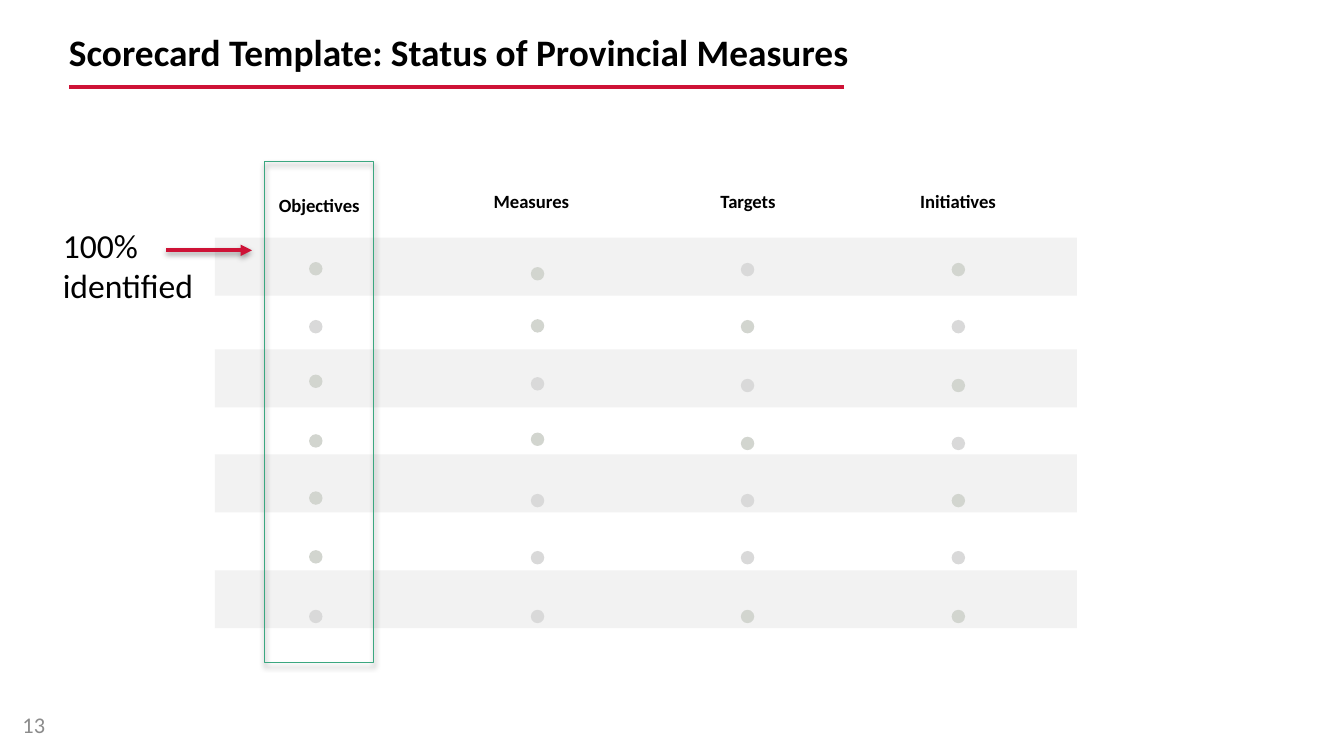
from lxml.etree import SubElement
from pptx import Presentation
from pptx.dml.color import RGBColor
from pptx.enum.shapes import MSO_CONNECTOR, MSO_SHAPE
from pptx.enum.text import MSO_ANCHOR, MSO_AUTO_SIZE, PP_ALIGN
from pptx.oxml import parse_xml
from pptx.oxml.ns import nsdecls, qn
from pptx.util import Pt

PX = 5715
HUES = {"ink": "000000", "gray": "8C8C8C", "band": "F2F2F2", "dark": "D2D5CF",
        "light": "D9D9D9", "red": "CE1236", "green": "3BA780"}
HUES = {name: RGBColor.from_string(code) for name, code in HUES.items()}


def write(frame, text, size, hue="ink", bold=False, align=PP_ALIGN.LEFT):
    frame.text = text
    para = frame.paragraphs[0]
    para.alignment = align
    font = para.runs[0].font
    font.name, font.size, font.bold = "Calibri", Pt(size), bold
    font.color.rgb = HUES[hue]


def shade(shape, alpha, dist):
    shape._element.spPr.append(parse_xml(
        f'<a:effectLst {nsdecls("a")}><a:outerShdw blurRad="{Pt(3.1)}" '
        f'dist="{Pt(dist)}" dir="5400000" rotWithShape="0"><a:srgbClr val="000000">'
        f'<a:alpha val="{alpha * 1000}"/></a:srgbClr></a:outerShdw></a:effectLst>'))


prs = Presentation()
prs.slide_width, prs.slide_height = 1600 * PX, 900 * PX
slide = prs.slides.add_slide(prs.slide_layouts[5])
shapes = slide.shapes

title = shapes.title
title.left, title.top, title.width, title.height = 82 * PX, 30 * PX, 1067 * PX, 62 * PX
frame = title.text_frame
frame.margin_left = frame.margin_right = frame.margin_top = frame.margin_bottom = 0
frame.vertical_anchor = MSO_ANCHOR.MIDDLE
write(frame, "Scorecard Template: Status of Provincial Measures", 20, bold=True)

number = shapes.add_textbox(11 * PX, 839 * PX, 373 * PX, 48 * PX).text_frame
number.word_wrap = True
number.vertical_anchor = MSO_ANCHOR.MIDDLE
write(number, "13", 12, "gray")

for top in (283, 416, 541, 679):
    band = shapes.add_shape(MSO_SHAPE.RECTANGLE, 256 * PX, top * PX, 1026 * PX, 69 * PX)
    band.shadow.inherit = False
    band.fill.solid()
    band.fill.fore_color.rgb = HUES["band"]
    band.line.fill.background()

heads = [("Objectives", 315, 223, 130), ("Measures", 571, 218, 123),
         ("Targets", 840, 218, 101), ("Initiatives", 1078, 218, 125)]
for text, left, top, width in heads:
    frame = shapes.add_textbox(left * PX, top * PX, width * PX, 43 * PX).text_frame
    frame.word_wrap = False
    frame.auto_size = MSO_AUTO_SIZE.SHAPE_TO_FIT_TEXT
    write(frame, text, 10, bold=True, align=PP_ALIGN.CENTER)

cols = (368, 632, 882, 1133)
rows = [("DDLD", (312, 318, 313, 313)), ("LDDL", (381, 380, 381, 381)),
        ("DLLD", (446, 449, 451, 451)), ("DDDL", (517, 515, 520, 520)),
        ("DLLD", (585, 588, 588, 588)), ("DLLL", (655, 656, 656, 656)),
        ("LLDD", (726, 726, 726, 726))]
for tones, tops in rows:
    for left, tone, top in zip(cols, tones, tops):
        dot = shapes.add_shape(MSO_SHAPE.OVAL, left * PX, top * PX, 16 * PX, 16 * PX)
        dot.shadow.inherit = False
        dot.fill.solid()
        dot.fill.fore_color.rgb = HUES["dark" if tone == "D" else "light"]
        dot.line.fill.background()

focus = shapes.add_shape(MSO_SHAPE.RECTANGLE, 315 * PX, 192 * PX, 130 * PX, 597 * PX)
focus.fill.background()
focus.line.color.rgb = HUES["green"]
focus.line.width = Pt(0.75)
shade(focus, 35, 1.8)

rule, arrow = [shapes.add_connector(MSO_CONNECTOR.STRAIGHT, x1 * PX, y * PX, x2 * PX, y * PX)
               for x1, x2, y in ((1005, 82, 104), (198, 300, 298))]
for line in (rule, arrow):
    line.line.color.rgb = HUES["red"]
    line.line.width = Pt(2)
SubElement(rule._element.spPr, qn("a:effectLst"))
SubElement(arrow.line._get_or_add_ln(), qn("a:tailEnd"), type="triangle")
shade(arrow, 38, 1.6)

note = shapes.add_textbox(59 * PX, 260 * PX, 197 * PX, 114 * PX).text_frame
note.word_wrap = True
note.auto_size = MSO_AUTO_SIZE.SHAPE_TO_FIT_TEXT
write(note, "100% identified", 18)

prs.save("out.pptx")
